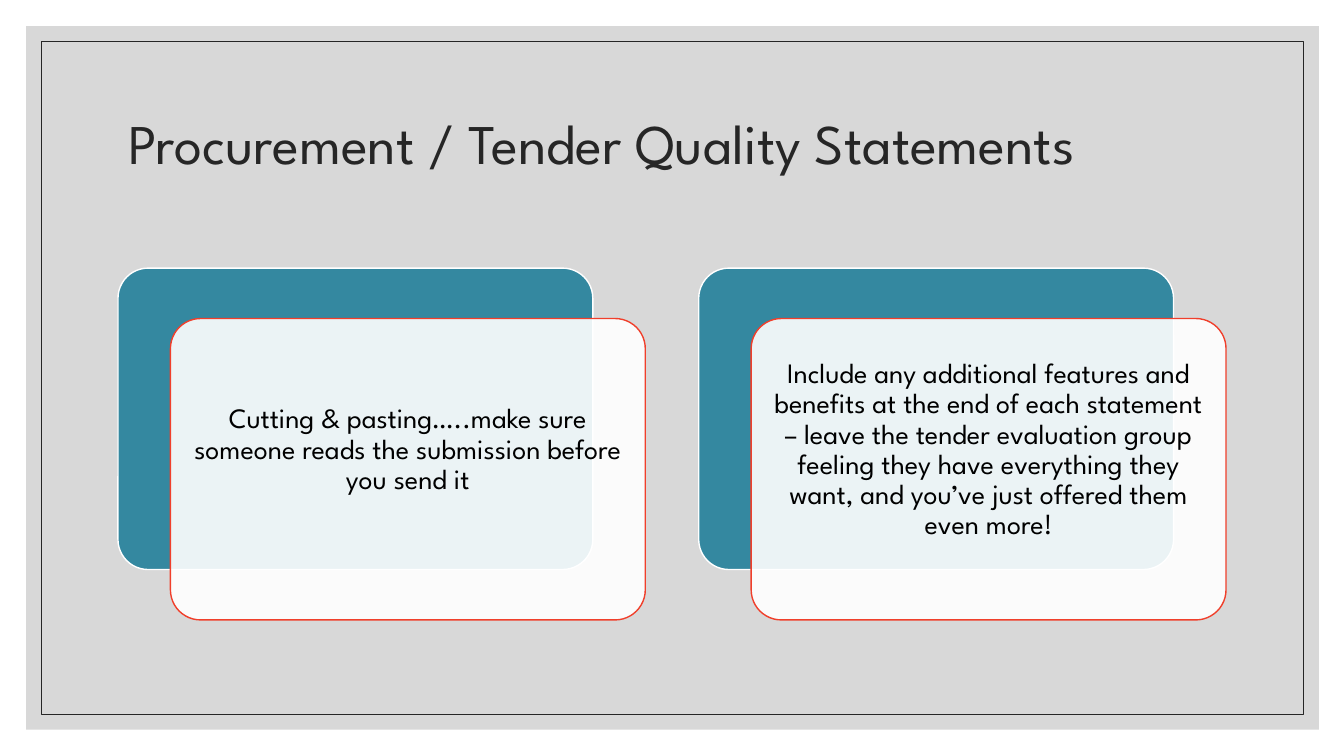
from pptx import Presentation
from pptx.dml.color import RGBColor
from pptx.enum.shapes import MSO_SHAPE
from pptx.enum.text import MSO_ANCHOR, MSO_AUTO_SIZE, PP_ALIGN
from pptx.oxml.ns import qn
from pptx.util import Inches, Pt
from lxml import etree

RECT, ROUND = MSO_SHAPE.RECTANGLE, MSO_SHAPE.ROUNDED_RECTANGLE
MIDDLE, NO_FIT = MSO_ANCHOR.MIDDLE, MSO_AUTO_SIZE.NONE
LEFT, CENTER = PP_ALIGN.LEFT, PP_ALIGN.CENTER

FONT = "League Spartan"
COLORS = {"panel": "BFBFBF", "ink": "262626", "teal": "3488A0",
          "white": "FFFFFF", "red": "F03F2B", "black": "000000"}
TITLE = "Procurement / Tender Quality Statements"
TIPS = [
    "Cutting & pasting…..make sure someone reads the submission before you send it",
    "Include any additional features and benefits at the end of each statement "
    "– leave the tender evaluation group feeling they have everything they want, "
    "and you’ve just offered them even more!",
]


def color(name):
    return RGBColor.from_string(COLORS[name])


def add_box(slide, kind, box, fill=None, line=None, width=1, alpha=None):
    """Add a flat shape; box is left, top, width, height in inches."""
    shape = slide.shapes.add_shape(kind, *map(Inches, box))
    shape.shadow.inherit = False
    if fill:
        shape.fill.solid()
        shape.fill.fore_color.rgb = color(fill)
    else:
        shape.fill.background()
    if alpha:
        tint = shape.fill._xPr.find(".//" + qn("a:srgbClr"))
        etree.SubElement(tint, qn("a:alpha"), val=str(alpha * 1000))
    if line:
        shape.line.color.rgb = color(line)
        shape.line.width = Pt(width)
    else:
        shape.line.fill.background()
    if kind == ROUND:
        shape.adjustments[0] = 0.1
    return shape


def set_text(shape, text, size, ink, align):
    frame = shape.text_frame
    frame.text = text
    frame.word_wrap = True
    frame.auto_size = NO_FIT
    frame.vertical_anchor = MIDDLE
    para = frame.paragraphs[0]
    para.alignment = align
    para.line_spacing = 0.9
    font = para.runs[0].font
    font.name, font.size = FONT, Pt(size)
    font.color.rgb = color(ink)


def add_frame(slide, box):
    """Grey panel with a thin line set inside its edge."""
    left, top, width, height = box
    gap = 0.15
    add_box(slide, RECT, box, fill="panel", alpha=60)
    inner = (left + gap, top + gap, width - 2 * gap, height - 2 * gap)
    add_box(slide, RECT, inner, line="ink", width=0.5)


def add_title(slide, box):
    title = slide.shapes.title
    title.left, title.top, title.width, title.height = map(Inches, box)
    set_text(title, TITLE, 40, "ink", LEFT)
    # Bring the title in front of the panel
    slide.shapes._spTree.append(title._element)


def add_card(slide, box, text):
    """Teal card with a white card shifted over it."""
    left, top, width, height = box
    add_box(slide, ROUND, box, fill="teal", line="white")
    front = add_box(slide, ROUND, (left + 0.52, top + 0.5, width, height),
                    fill="white", line="red", alpha=90)
    set_text(front, text, 20, "black", CENTER)
    frame = front.text_frame
    frame.margin_left = frame.margin_right = frame.margin_top = Inches(0.08)
    # A deeper bottom margin lifts the text above the middle
    frame.margin_bottom = Inches(0.46)


def main():
    deck = Presentation()
    deck.slide_width, deck.slide_height = Inches(13.33), Inches(7.5)
    slide = deck.slides.add_slide(deck.slide_layouts[5])
    add_frame(slide, (0.26, 0.26, 12.82, 6.98))
    add_title(slide, (1.17, 0.7, 11, 1.5))
    for col, tip in enumerate(TIPS):
        add_card(slide, (1.17 + col * 5.76, 2.66, 4.71, 2.99), tip)
    deck.save("out.pptx")


if __name__ == "__main__":
    main()
